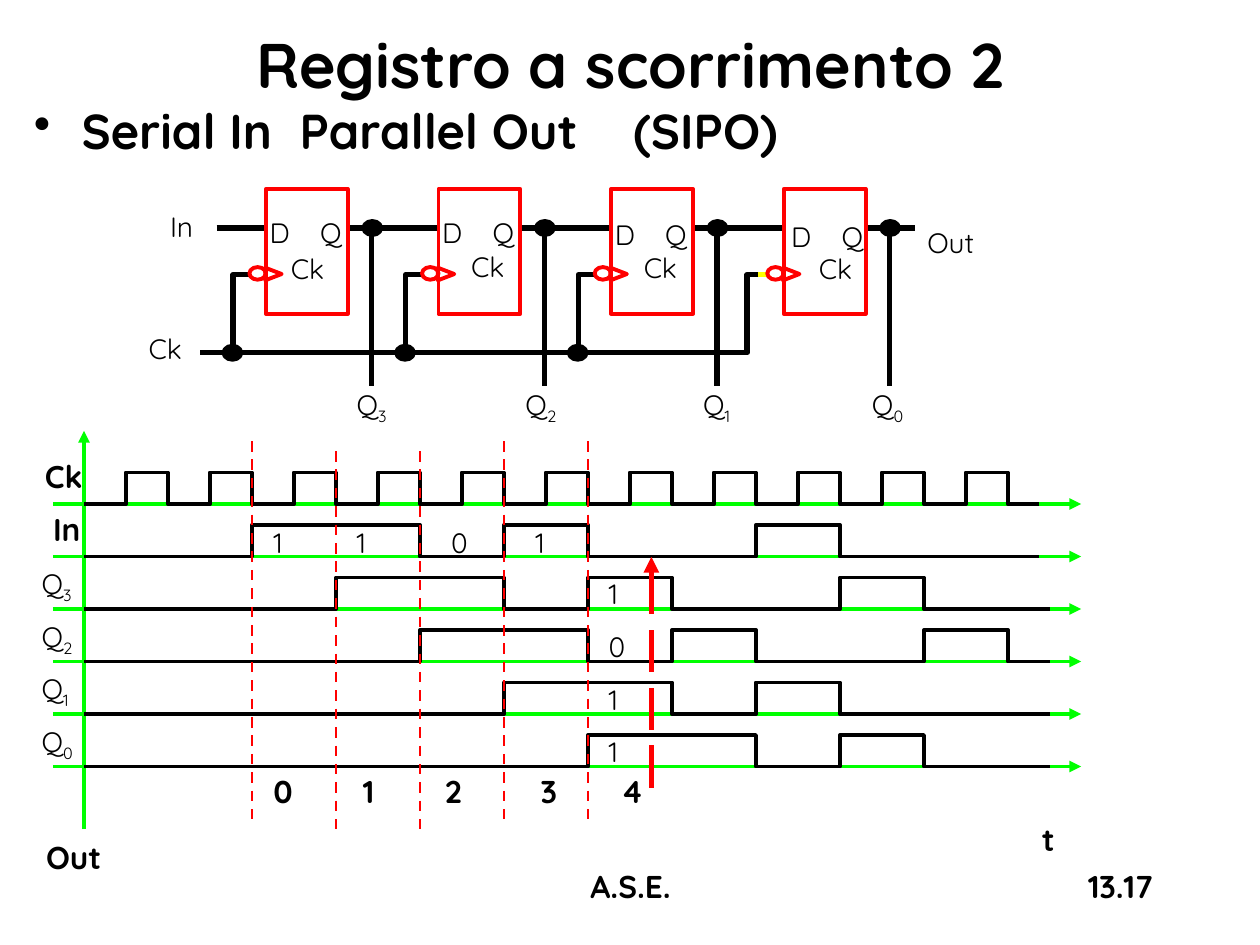
"""Build the slide on the serial-in parallel-out shift register."""
from lxml import etree
from pptx import Presentation
from pptx.dml.color import RGBColor
from pptx.enum.dml import MSO_LINE
from pptx.enum.shapes import MSO_CONNECTOR, MSO_SHAPE
from pptx.enum.text import MSO_ANCHOR, PP_ALIGN
from pptx.oxml.ns import qn
from pptx.util import Inches, Pt

RECTANGLE, OVAL = MSO_SHAPE.RECTANGLE, MSO_SHAPE.OVAL
TRIANGLE = MSO_SHAPE.ISOSCELES_TRIANGLE
STRAIGHT = MSO_CONNECTOR.STRAIGHT
DASH, LONG_DASH = MSO_LINE.DASH, MSO_LINE.LONG_DASH
TOP, MIDDLE = MSO_ANCHOR.TOP, MSO_ANCHOR.MIDDLE
LEFT, CENTER, RIGHT = PP_ALIGN.LEFT, PP_ALIGN.CENTER, PP_ALIGN.RIGHT
BLACK, RED, GREEN, YELLOW = "000000", "FF0000", "00FF00", "FFFF00"

prs = Presentation()
prs.slide_width, prs.slide_height = Inches(10), Inches(7.5)
slide = prs.slides.add_slide(prs.slide_layouts[6])


def label(pieces, x, y, w, h, size=16, bold=False, align=LEFT, anchor=TOP, padded=False):
    """Add a text box whose pieces are (text, run attributes) pairs."""
    box = slide.shapes.add_textbox(Inches(x), Inches(y), Inches(w), Inches(h))
    frame = box.text_frame
    frame.word_wrap = True
    frame.vertical_anchor = anchor
    if not padded:
        frame.margin_left = frame.margin_top = frame.margin_right = 0
        frame.margin_bottom = Inches(0.09)
    paragraph = frame.paragraphs[0]
    paragraph.alignment = align
    for text, attributes in pieces:
        run = paragraph.add_run()
        run.text = text
        run.font.name = "Quicksand"
        run.font.size = Pt(size)
        run.font.bold = bold
        run.font.color.rgb = RGBColor.from_string(BLACK)
        for key, value in attributes.items():
            run.font._element.set(key, value)
    return paragraph


def wire(x1, y1, x2, y2, color=BLACK, width=3, dash=None, arrow=False):
    """Add a straight line, with an arrowhead at its end if asked."""
    connector = slide.shapes.add_connector(
        STRAIGHT, Inches(x1), Inches(y1), Inches(x2), Inches(y2))
    connector.line.color.rgb = RGBColor.from_string(color)
    connector.line.width = Pt(width)
    if dash:
        connector.line.dash_style = dash
    if arrow:
        etree.SubElement(connector.line._get_or_add_ln(), qn("a:tailEnd"), type="triangle")
    etree.SubElement(connector._element.spPr, qn("a:effectLst"))


label([("Registro a scorrimento 2", {})], 0.17, 0.17, 9.67, 0.67, 36, True, CENTER, MIDDLE, True)
heading = label(
    [("Serial In", {}), (" ", {"spc": "800"}), ("Parallel Out", {}),
     (" ", {"spc": "2400"}), ("(SIPO)", {})],
    0.17, 0.75, 9.67, 5.92, 28, True, padded=True)
heading_properties = heading._p.get_or_add_pPr()
heading_properties.set("marL", str(Inches(0.38)))
heading_properties.set("indent", str(-Inches(0.38)))
etree.SubElement(heading_properties, qn("a:buChar"), char="•")

# name, D x, D/Q y, Ck x, Ck y, output label x
flip_flops = [("3", 0.03, 1.71, 0.2, 2.0, 2.83), ("2", 0.03, 1.71, 0.26, 1.98, 4.17),
              ("1", 0.03, 1.73, 0.26, 1.99, 5.58), ("0", 0.06, 1.74, 0.28, 2.0, 6.92)]
pitch = 1.37
symbols, traces, captions = [], [], []
wire(1.72, 1.81, 2.11, 1.81)
wire(6.02, 2.18, 6.09, 2.18, YELLOW)
traces.append(([(1.59, 2.8), (5.93, 2.8), (5.93, 2.18), (6.02, 2.18)], 3))
for stage, (index, data_x, data_y, clock_x, clock_y, output_x) in enumerate(flip_flops):
    left = 2.11 + stage * pitch
    last = stage == len(flip_flops) - 1
    wire(left + 0.65, 1.81, 7.26 if last else left + pitch, 1.81)
    wire(left + 0.84, 1.81, left + 0.84, 3.06)
    symbols += [(RECTANGLE, left, 1.5, 0.65, 0.99, 0, RED, 2.25, False),
                (TRIANGLE, left + 0.01, 2.11, 0.1, 0.13, 90, RED, 2.25, False),
                (OVAL, left - 0.13, 2.12, 0.13, 0.1, 0, RED, 2.25, False),
                (OVAL, left + 0.78, 1.76, 0.13, 0.1, 0, BLACK, 3, True)]
    if not last:
        traces.append(([(left - 0.13, 2.18), (left - 0.26, 2.18), (left - 0.26, 2.8)], 3))
        symbols.append((OVAL, left - 0.33, 2.75, 0.13, 0.1, 0, BLACK, 3, True))
    captions += [("D", left + data_x, data_y), ("Q", left + data_x + 0.4, data_y),
                 ("Ck", left + clock_x, clock_y)]
    for x, y in [(output_x, 3.08), (0.33, 4.5 + stage * 5 / 12)]:
        label([("Q", {}), (index, {"baseline": "-25000"})], x, y, 0.3, 0.36)

toggles = [range(1, 23), (4, 8, 10, 12, 16, 18), (6, 10, 12, 14, 18, 20),
           (8, 12, 14, 16, 20, 22), (10, 14, 16, 18), (12, 16, 18, 20)]
origin = 2 / 3
wire(origin, 6.58, origin, 3.42, GREEN, 2.25, arrow=True)
for row, steps in enumerate(toggles):
    low = 4 + row * 5 / 12
    wire(0.42, low, 8.58, low, GREEN, 2.25, arrow=True)
    points, level = [(origin, low)], low
    for step in steps:
        x = origin + step / 3
        points.append((x, level))
        level = low - 0.25 if level == low else low
        points.append((x, level))
    points.append((8.25 if row < 2 else 8.33, low))
    traces.append((points, 2.25))

for points, width in traces:
    start, *rest = [(Inches(x), Inches(y)) for x, y in points]
    builder = slide.shapes.build_freeform(*start)
    builder.add_line_segments(rest, close=False)
    trace = builder.convert_to_shape()
    trace.shadow.inherit = False
    trace.fill.background()
    trace.line.color.rgb = RGBColor.from_string(BLACK)
    trace.line.width = Pt(width)

for preset, x, y, w, h, rotation, color, width, filled in symbols:
    symbol = slide.shapes.add_shape(preset, Inches(x), Inches(y), Inches(w), Inches(h))
    symbol.shadow.inherit = False
    symbol.rotation = rotation
    symbol.line.color.rgb = RGBColor.from_string(color)
    symbol.line.width = Pt(width)
    if filled:
        symbol.fill.solid()
        symbol.fill.fore_color.rgb = RGBColor.from_string(color)
    else:
        symbol.fill.background()

for period in range(5):
    x = 2 + period * 2 / 3
    top = 3.58 if period in (1, 2) else 3.5
    wire(x, top, x, top + 3, RED, 1.5, DASH)
wire(5.17, 6.25, 5.17, 4.42, RED, 3, LONG_DASH, True)

captions += [("In", 1.35, 1.66), ("Ck", 1.18, 2.63), ("Out", 7.36, 1.79),
             ("1", 2.17, 4.17), ("1", 2.83, 4.17), ("0", 3.58, 4.17), ("1", 4.25, 4.17)]
captions += [(bit, 4.83, 4.58 + row * 5 / 12) for row, bit in enumerate("1011")]
for text, x, y in captions:
    label([(text, {})], x, y, 0.17 if text in "01" else 0.4, 0.36)

for text, x in zip("01234", (2.17, 2.88, 3.53, 4.29, 4.93)):
    label([(text, {})], x, 6.13, 0.25, 0.4, 18, True)
for text, x, y, w, h, align in [
        ("Ck", 0.17, 3.58, 0.67, 0.4, CENTER), ("In", 0.17, 4, 0.72, 0.4, CENTER),
        ("Out", 0.25, 6.6, 0.67, 0.4, CENTER), ("t", 8.17, 6.46, 0.35, 0.4, LEFT),
        ("A.S.E.", 3.42, 6.83, 3.17, 0.5, CENTER), ("13.17", 7.17, 6.83, 2.08, 0.5, RIGHT)]:
    label([(text, {})], x, y, w, h, 18, True, align, padded=True)

prs.save("out.pptx")
